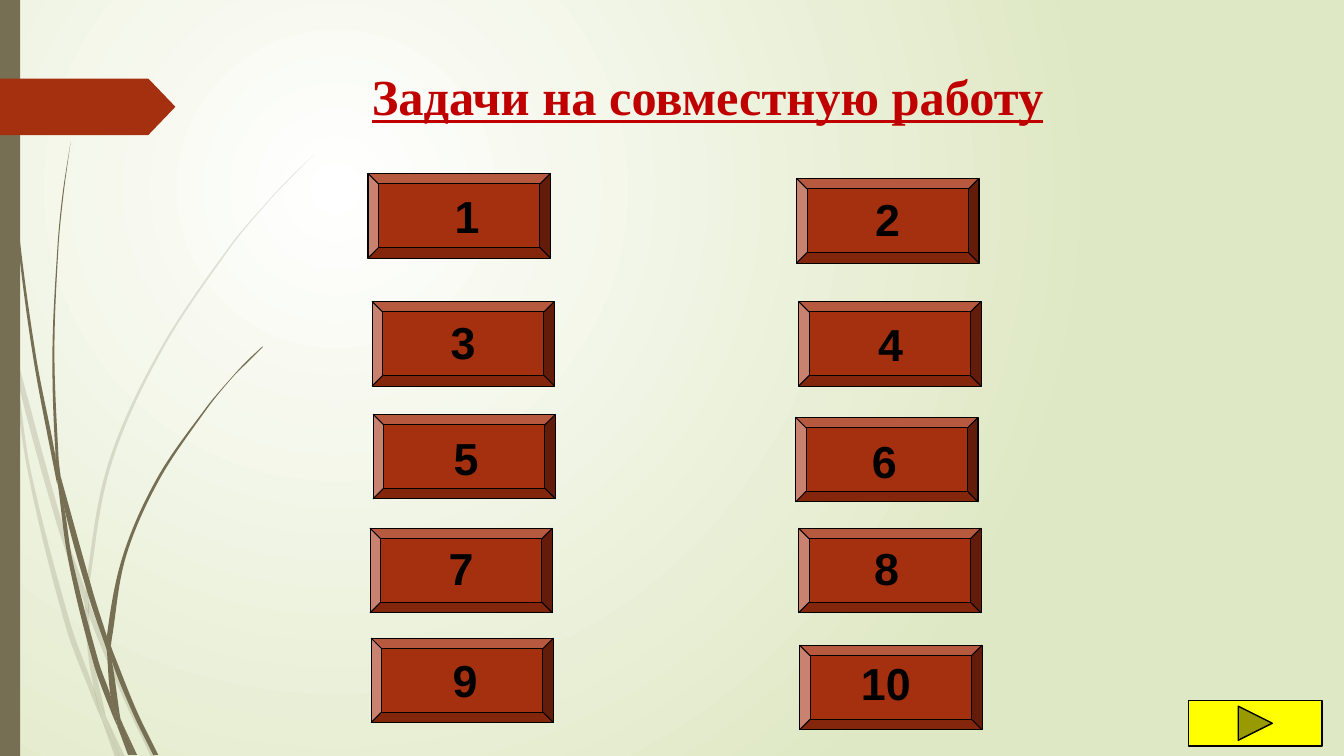
import lxml.etree
import pptx
import pptx.util
from pptx.dml.color import RGBColor
from pptx.enum.shapes import MSO_SHAPE
from pptx.enum.text import MSO_AUTO_SIZE
from pptx.oxml.ns import qn
from pptx.util import Inches, Pt

COLORS = {"white": "FFFFFF", "pale green": "DFE8C4", "olive": "766F54",
          "rust": "A53010", "red": "C00000", "yellow": "FFFF00", "black": "000000"}
RGB = {name: RGBColor.from_string(value) for name, value in COLORS.items()}
UNITS = 1000  # outline units per inch

# Pieces of grass: left and right edge, each from top to bottom.
PALE_GRASS = [
    ([(0, 2.99), (0.1, 3.44), (0.11, 3.5)], [(0, 2.82), (0.08, 3.22), (0.11, 3.5)]),
    ([(0.14, 3.45), (0.17, 3.76), (0.57, 5.22), (0.84, 5.99)],
     [(0.14, 3.45), (0.62, 5.2), (0.85, 5.86)]),
    ([(0.88, 5.96), (0.88, 6.1), (1.23, 6.94), (1.5, 7.51)],
     [(0.88, 5.96), (0.92, 6.07), (1.27, 6.92), (1.55, 7.51)]),
    ([(1.05, 7.11), (1.19, 7.51)], [(1.05, 7.11), (1.24, 7.51)]),
    ([(0.11, 3.5), (0.28, 4.7), (0.65, 6.21), (0.92, 6.93), (1.01, 7.14)],
     [(0.11, 3.5), (0.17, 3.76), (0.31, 4.69), (0.7, 6.19), (0.93, 6.83), (1.01, 7.14)]),
    ([(0.84, 5.99), (0.87, 6.46), (0.93, 6.83), (0.96, 6.92), (1.05, 7.11)],
     [(0.84, 5.99), (0.88, 6.1), (0.91, 6.46), (1.04, 7.06), (1.05, 7.11)]),
    ([(3.12, 1.53), (2.89, 1.75), (2.68, 1.97), (2.28, 2.44), (1.58, 3.48), (1.07, 4.61),
      (0.85, 5.84), (0.88, 5.96)],
     [(3.12, 1.53), (2.9, 1.75), (2.68, 1.98), (2.29, 2.45), (1.6, 3.49), (1.1, 4.62),
      (0.88, 5.84), (0.88, 5.96)]),
    ([(1.01, 7.14), (1.14, 7.51)], [(1.01, 7.14), (1.19, 7.51)]),
    ([(0.85, 5.86), (0.84, 5.99), (0.88, 6.1)], [(0.85, 5.86), (0.88, 5.96), (0.88, 6.1)]),
    ([(0.93, 6.83), (0.99, 7.07), (1.01, 7.14), (1.19, 7.51)],
     [(0.93, 6.83), (0.96, 6.92), (1.05, 7.11), (1.19, 7.51)]),
]
DARK_GRASS = [
    ([(0.03, 0), (0.03, 0.48), (0.07, 1.1), (0.17, 2.33), (0.33, 3.55), (0.56, 4.77), (0.57, 4.81)],
     [(0.03, 0), (0.05, 0.48), (0.08, 1.09), (0.19, 2.32), (0.36, 3.55), (0.55, 4.53), (0.57, 4.81)]),
    ([(0.6, 4.72), (0.64, 5.05), (0.88, 5.92), (1.06, 6.45)],
     [(0.6, 4.72), (0.93, 5.9), (1.06, 6.31)]),
    ([(1.1, 6.41), (1.11, 6.56), (1.32, 7.08), (1.52, 7.49)],
     [(1.1, 6.41), (1.13, 6.49), (1.36, 7.06), (1.57, 7.49)]),
    ([(0.57, 4.77), (0.68, 5.57), (0.93, 6.59), (1.11, 7.08), (1.17, 7.22)],
     [(0.57, 4.77), (0.64, 5.05), (0.72, 5.56), (0.98, 6.57), (1.1, 6.91), (1.17, 7.22)]),
    ([(0.7, 1.41), (0.62, 1.93), (0.57, 2.45), (0.52, 3.49), (0.55, 4.49), (0.6, 4.72)],
     [(0.7, 1.41), (0.63, 1.93), (0.58, 2.45), (0.54, 3.49), (0.58, 4.53), (0.6, 4.72)]),
    ([(1.22, 7.19), (1.33, 7.49)], [(1.22, 7.19), (1.36, 7.49)]),
    ([(0.55, 4.49), (0.55, 4.53), (0.57, 4.78), (0.64, 5.05)],
     [(0.55, 4.49), (0.6, 4.72), (0.64, 5.05)]),
    ([(2.6, 3.44), (2.45, 3.58), (2.31, 3.73), (2.04, 4.05), (1.56, 4.74), (1.22, 5.51),
      (1.06, 6.31), (1.1, 6.41)],
     [(2.61, 3.44), (2.46, 3.59), (2.31, 3.74), (2.05, 4.06), (1.58, 4.76), (1.25, 5.52),
      (1.11, 6.33), (1.1, 6.41)]),
    ([(1.17, 7.22), (1.27, 7.49)], [(1.17, 7.22), (1.31, 7.49)]),
    ([(1.06, 6.45), (1.1, 6.92), (1.16, 7.06), (1.22, 7.19)],
     [(1.06, 6.45), (1.11, 6.56), (1.2, 7.16), (1.22, 7.19)]),
    ([(1.06, 6.31), (1.06, 6.45), (1.11, 6.56)], [(1.06, 6.31), (1.1, 6.41), (1.11, 6.56)]),
    ([(1.1, 6.91), (1.16, 7.17), (1.17, 7.22), (1.31, 7.49)],
     [(1.1, 6.91), (1.16, 7.06), (1.22, 7.19), (1.33, 7.49)]),
]

# Number buttons: label, button corner, label corner.
BUTTONS = [
    ("1", (3.65, 1.72), (4.41, 1.82)), ("2", (7.9, 1.77), (8.58, 1.85)),
    ("3", (3.69, 2.99), (4.37, 3.07)), ("4", (7.92, 2.99), (8.61, 3.09)),
    ("5", (3.7, 4.11), (4.4, 4.22)), ("6", (7.89, 4.14), (8.55, 4.25)),
    ("7", (3.67, 5.24), (4.35, 5.32)), ("8", (7.92, 5.24), (8.57, 5.32)),
    ("9", (3.68, 6.33), (4.39, 6.43)), ("10", (7.93, 6.4), (8.44, 6.46)),
]


def edge_controls(edge):
    """Return the two Bezier control points of each step along a smooth edge."""
    last = len(edge) - 1
    slopes = []
    for i in range(last + 1):
        (x0, y0), (x1, y1) = edge[max(i - 1, 0)], edge[min(i + 1, last)]
        slopes.append((x1 - x0) / (y1 - y0))
    controls = []
    for i in range(last):
        (x0, y0), (x1, y1) = edge[i], edge[i + 1]
        third = (y1 - y0) / 3
        controls.append([(x0 + slopes[i] * third, y0 + third),
                         (x1 - slopes[i + 1] * third, y1 - third)])
    return controls


def add_box(shapes, kind, box, fill, line_width=0):
    sp = shapes.add_shape(kind, *[Inches(v) for v in box])
    sp.shadow.inherit = False
    sp.fill.solid()
    sp.fill.fore_color.rgb = RGB[fill]
    if line_width:
        sp.line.color.rgb = RGB["black"]
        sp.line.width = Pt(line_width)
    else:
        sp.line.fill.background()
    return sp


prs = pptx.Presentation()
prs.slide_width, prs.slide_height = Inches(13.33), Inches(7.5)
s = prs.slides.add_slide(prs.slide_layouts[6])

# Background: round gradient centred in the upper left
bg = s.background.fill
bg.gradient()
for stop, name, position in zip(bg.gradient_stops, ("white", "pale green"), (0, 1)):
    stop.color.rgb = RGB[name]
    stop.position = position
grad = next(s.element.iter(qn("a:gradFill")))
grad.remove(grad.find(qn("a:lin")))
circle = lxml.etree.SubElement(grad, qn("a:path"), path="circle")
lxml.etree.SubElement(circle, qn("a:fillToRect"), l="50000", t="50000", r="100000", b="100000")

# Grass: straight outlines whose steps along the edges become curves
for pieces, opacity in ((PALE_GRASS, 20), (DARK_GRASS, 100)):
    grass = s.shapes.add_group_shape()
    for left, right in pieces:
        back = right[::-1]
        outline = [(round(x * UNITS), round(y * UNITS)) for x, y in left + back]
        builder = grass.shapes.build_freeform(*outline[0], scale=Inches(1) / UNITS)
        builder.add_line_segments(outline[1:], close=True)
        blade = builder.convert_to_shape()
        blade.shadow.inherit = False
        blade.fill.solid()
        blade.fill.fore_color.rgb = RGB["olive"]
        blade.line.fill.background()
        if opacity < 100:
            color = next(blade.element.spPr.iter(qn("a:srgbClr")))
            lxml.etree.SubElement(color, qn("a:alpha"), val=str(opacity * 1000))
        x_min, y_min = (min(values) for values in zip(*outline))
        controls = edge_controls(left) + [[]] + edge_controls(back)
        for line, pair in zip(list(blade.element.iter(qn("a:lnTo"))), controls):
            if pair:
                line.tag = qn("a:cubicBezTo")
            for i, (x, y) in enumerate(pair):
                pt = lxml.etree.Element(qn("a:pt"), x=str(round(x * UNITS - x_min)),
                                        y=str(round(y * UNITS - y_min)))
                line.insert(i, pt)

# Side bar and arrow tab
add_box(s.shapes, MSO_SHAPE.RECTANGLE, (0, 0, 0.2, 7.5), "olive")
tab = add_box(s.shapes, MSO_SHAPE.PENTAGON, (0, 0.78, 1.74, 0.56), "rust")
tab.adjustments[0] = 0.48

# Buttons
for label, button_at, label_at in BUTTONS:
    button = add_box(s.shapes, MSO_SHAPE.BEVEL, (*button_at, 1.81, 0.84), "rust", 0.75)
    button.adjustments[0] = 0.125
add_box(s.shapes, MSO_SHAPE.ACTION_BUTTON_FORWARD_OR_NEXT, (11.79, 6.95, 1.32, 0.45), "yellow", 1)

# Title and button numbers
title_font = {"name": "Times New Roman", "size": Pt(36), "bold": True, "underline": True}
number_font = {"name": "Arial", "size": Pt(32), "bold": True}
texts = [("Задачи на совместную работу", (3.59, 0.6, 9.74, 1.4), title_font, "red")]
for label, button_at, label_at in BUTTONS:
    width = 0.45 if len(label) == 1 else 0.7
    texts.append((label, (*label_at, width, 0.63), number_font, "black"))

for text, box, font, color in texts:
    tf = s.shapes.add_textbox(*[Inches(v) for v in box]).text_frame
    tf.word_wrap = font is title_font
    if font is number_font:
        tf.auto_size = MSO_AUTO_SIZE.SHAPE_TO_FIT_TEXT
    r = tf.paragraphs[0].add_run()
    r.text = text
    for key, value in font.items():
        setattr(r.font, key, value)
    r.font.color.rgb = RGB[color]

prs.save("out.pptx")
